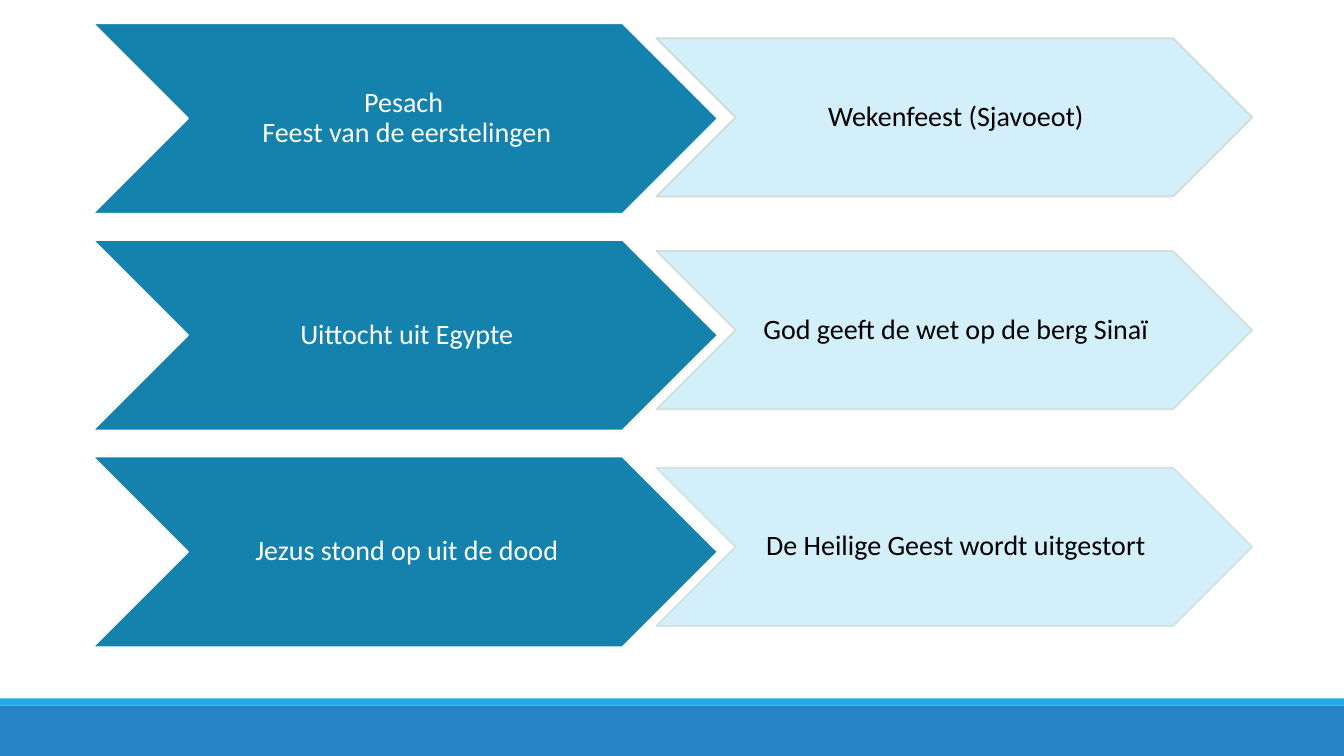
from lxml.etree import SubElement
from pptx import Presentation
from pptx.dml.color import RGBColor
from pptx.enum.shapes import MSO_SHAPE as Shape
from pptx.enum.text import MSO_ANCHOR as Anchor, PP_ALIGN as Align
from pptx.oxml.ns import qn
from pptx.util import Inches, Pt

WHITE = RGBColor(0xFF, 0xFF, 0xFF)
BLACK = RGBColor(0x00, 0x00, 0x00)
BLUE = RGBColor(0x26, 0x83, 0xC6)
CYAN = RGBColor(0x1C, 0xAD, 0xE4)
TEAL = RGBColor(0x14, 0x82, 0xAC)
PALE = RGBColor(0xD2, 0xEF, 0xFA)
EDGES = [RGBColor(0xCE, 0xDA, 0xD1), RGBColor(0xD1, 0xDD, 0xD7), RGBColor(0xD3, 0xE0, 0xDF)]


def add_box(kind, left, top, width, height, fill, edge=None):
    box = slide.shapes.add_shape(kind, Inches(left), Inches(top), Inches(width), Inches(height))
    box.shadow.inherit = False
    box.fill.solid()
    box.fill.fore_color.rgb = fill
    if edge is None:
        box.line.fill.background()
    else:
        box.line.color.rgb = edge
        box.line.width = Pt(1.25)
    return box


def write(box, text, size=20, color=BLACK, font="Calibri"):
    frame = box.text_frame
    frame.word_wrap = True
    frame.vertical_anchor = Anchor.MIDDLE
    frame.margin_left, frame.margin_right = Inches(0.03), 0
    frame.margin_top = frame.margin_bottom = Inches(0.01)
    para = frame.paragraphs[0]
    para.text = text
    para.alignment = Align.CENTER
    para.line_spacing = 0.9
    para.font.size = Pt(size)
    para.font.name = font
    para.font.color.rgb = color


deck = Presentation()
deck.slide_width, deck.slide_height = Inches(13.33), Inches(7.5)
slide = deck.slides.add_slide(deck.slide_layouts[6])

# Footer bands
add_box(Shape.RECTANGLE, 0, 7, 13.33, 0.5, BLUE)
add_box(Shape.RECTANGLE, 0, 6.93, 13.33, 0.07, CYAN)

# Each feast or event leads to its counterpart; "\v" is a line break
rows = [
    ("Pesach \vFeest van de eerstelingen", "Wekenfeest (Sjavoeot)", 0.38),
    ("Uittocht uit Egypte", "God geeft de wet op de berg Sinaï", 2.49),
    ("Jezus stond op uit de dood", "De Heilige Geest wordt uitgestort", 4.64),
]
for i, ((cause, result, top), edge) in enumerate(zip(rows, EDGES)):
    dark = add_box(Shape.CHEVRON, 0.92, 0.23 + 2.15 * i, 6.2, 1.89, TEAL, WHITE)
    write(dark, cause, color=WHITE)
    light = add_box(Shape.CHEVRON, 6.51, top, 5.91, 1.57, PALE, edge)
    tint = light.line._get_or_add_ln().find(".//" + qn("a:srgbClr"))
    SubElement(tint, qn("a:alpha"), val="90000")
    write(light, result)

deck.save("out.pptx")
